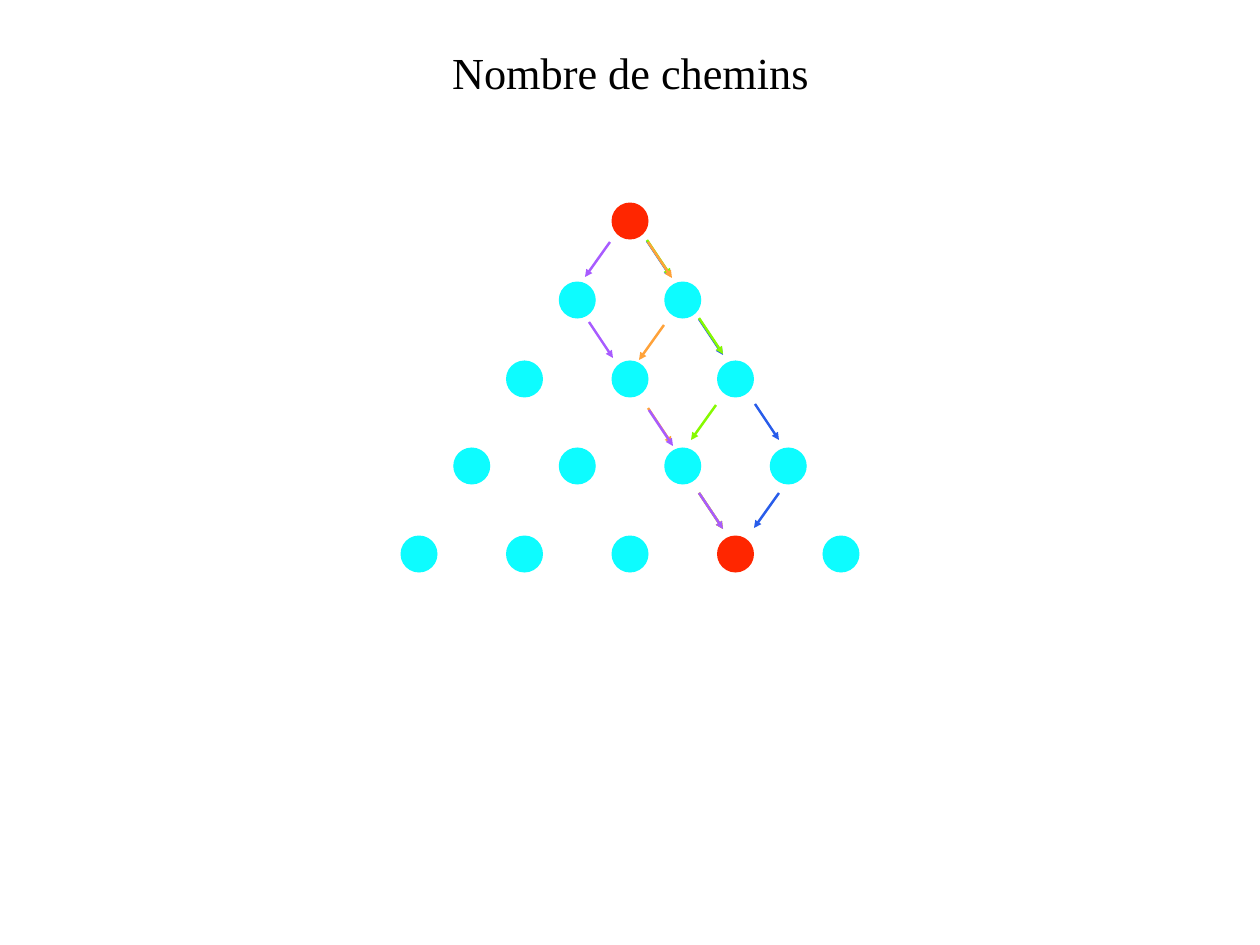
from lxml.etree import SubElement
from pptx import Presentation
from pptx.dml.color import RGBColor
from pptx.enum.shapes import MSO_CONNECTOR, MSO_SHAPE
from pptx.enum.text import MSO_ANCHOR, MSO_AUTO_SIZE, PP_ALIGN
from pptx.oxml.ns import qn
from pptx.util import Pt

TITLE = "Nombre de chemins"
TITLE_BOX = (445, 42, 371, 60)
TITLE_INSET = 5

SLIDE_SIZE = (1260, 945)
EMU_PER_PX = 10320

NODE_COLOR = "0DFCFF"
ENDPOINT_COLOR = "FF2600"
ENDPOINTS = {(0, 0), (4, 3)}  # (row, column)
NODE_SIZE = 37
APEX_X = 630
BASE_WIDTH = 422
ROW_CENTERS = [221, 300, 379, 466, 554]

STEPS = {"right": (24, 36), "left": (-25, 35)}
# Each path: colour, then the start of each arrow and its direction
PATHS = [
    ("285CEA", [(647, 241, "right"), (699, 319, "right"),
                (755, 404, "right"), (779, 493, "left")]),
    ("86FA00", [(647, 240, "right"), (699, 318, "right"),
                (699, 493, "right"), (716, 405, "left")]),
    ("FFA239", [(648, 242, "right"), (648, 408, "right"),
                (699, 493, "right"), (664, 325, "left")]),
    ("A85BFF", [(589, 322, "right"), (649, 410, "right"),
                (699, 493, "right"), (610, 242, "left")]),
]


def px(*lengths):
    """Turn lengths in px into a list of EMU."""
    return [round(length * EMU_PER_PX) for length in lengths]


def color(hex_string):
    return RGBColor.from_string(hex_string)


def write_text(shape, text, *, size, font, text_color, align):
    paragraph = shape.text_frame.paragraphs[0]
    paragraph.alignment = align
    run = paragraph.add_run()
    run.text = text
    run.font.size = Pt(size)
    run.font.name = font
    run.font.color.rgb = color(text_color)


def format_title(title):
    title.left, title.top, title.width, title.height = px(*TITLE_BOX)
    frame = title.text_frame
    frame.word_wrap = False
    frame.auto_size = MSO_AUTO_SIZE.SHAPE_TO_FIT_TEXT
    frame.vertical_anchor = MSO_ANCHOR.MIDDLE
    (frame.margin_left, frame.margin_top,
     frame.margin_right, frame.margin_bottom) = px(*[TITLE_INSET] * 4)
    write_text(title, TITLE, size=36, font="Times New Roman",
               text_color="000000", align=PP_ALIGN.CENTER)


def add_node(slide, center_x, center_y, fill):
    radius = NODE_SIZE / 2
    node = slide.shapes.add_shape(
        MSO_SHAPE.OVAL,
        *px(center_x - radius, center_y - radius, NODE_SIZE, NODE_SIZE))
    node.shadow.inherit = False
    node.fill.solid()
    node.fill.fore_color.rgb = color(fill)
    node.line.fill.background()


def add_arrow(slide, x, y, direction, line_color):
    step_x, step_y = STEPS[direction]
    arrow = slide.shapes.add_connector(
        MSO_CONNECTOR.STRAIGHT, *px(x, y, x + step_x, y + step_y))
    arrow.line.color.rgb = color(line_color)
    arrow.line.width = Pt(2)
    SubElement(arrow.line._get_or_add_ln(), qn("a:tailEnd"), type="triangle")
    SubElement(arrow._element.spPr, qn("a:effectLst"))


def main():
    presentation = Presentation()
    presentation.slide_width, presentation.slide_height = px(*SLIDE_SIZE)
    slide = presentation.slides.add_slide(presentation.slide_layouts[5])
    format_title(slide.shapes.title)

    half_gap = BASE_WIDTH / (len(ROW_CENTERS) - 1) / 2
    for row, center_y in enumerate(ROW_CENTERS):
        for column in range(row + 1):
            fill = ENDPOINT_COLOR if (row, column) in ENDPOINTS else NODE_COLOR
            add_node(slide, APEX_X + (2 * column - row) * half_gap, center_y, fill)

    for path_color, arrows in PATHS:
        for x, y, direction in arrows:
            add_arrow(slide, x, y, direction, path_color)

    presentation.save("out.pptx")


if __name__ == "__main__":
    main()
